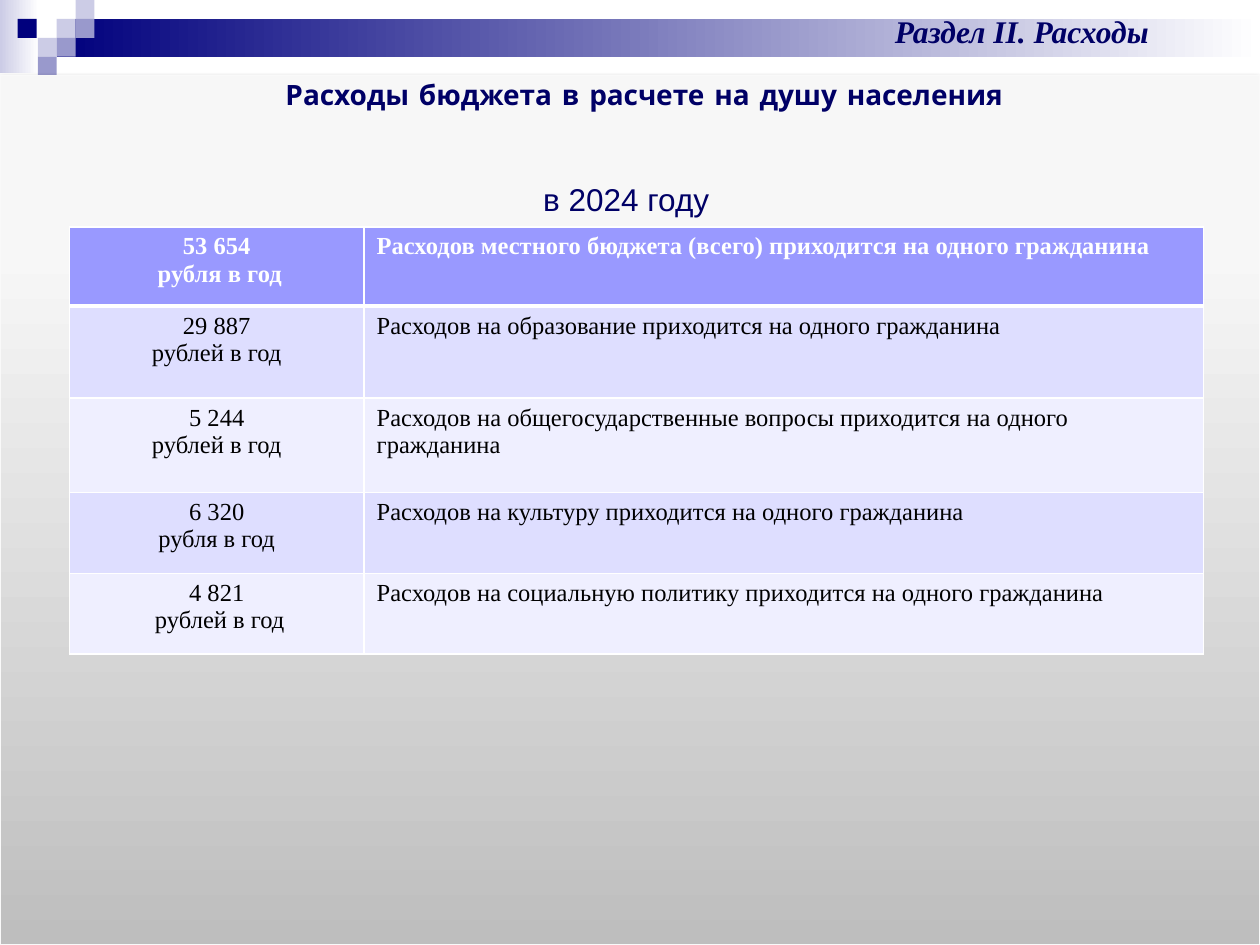
from copy import deepcopy

from lxml import etree
from pptx import Presentation
from pptx.dml.color import RGBColor
from pptx.enum.shapes import MSO_SHAPE
from pptx.enum.text import MSO_ANCHOR, PP_ALIGN
from pptx.oxml import parse_xml
from pptx.oxml.ns import nsdecls, qn
from pptx.util import Inches, Pt

RECTANGLE, PROCESS = MSO_SHAPE.RECTANGLE, MSO_SHAPE.FLOWCHART_PROCESS
CENTER, LEFT = PP_ALIGN.CENTER, PP_ALIGN.LEFT
MIDDLE = MSO_ANCHOR.MIDDLE

WHITE = RGBColor(0xFF, 0xFF, 0xFF)
BLACK = RGBColor(0x00, 0x00, 0x00)
NAVY = RGBColor(0x00, 0x00, 0x7D)
INK = RGBColor(0x00, 0x00, 0x66)
LILAC = RGBColor(0xCC, 0xCC, 0xE6)
VIOLET = RGBColor(0x99, 0x99, 0xCC)
HEADER = RGBColor(0x99, 0x99, 0xFF)
BAND_DARK = RGBColor(0xDE, 0xDE, 0xFF)
BAND_LIGHT = RGBColor(0xEF, 0xEF, 0xFF)
GREY = RGBColor(0xBE, 0xBE, 0xBE)
PALE = RGBColor(0xF7, 0xF7, 0xF7)
PALEST = RGBColor(0xF8, 0xF8, 0xF8)
EDGE = RGBColor(0xF9, 0xF9, 0xF9)

SQUARES = [
    (0.45, 0.15, LILAC), (0.6, 0, LILAC), (0.6, 0.15, VIOLET), (0.3, 0.3, LILAC),
    (0.14, 0.15, NAVY), (0.45, 0.3, VIOLET), (0.3, 0.45, VIOLET),
]
COLUMN_WIDTHS = [2.34, 6.66]
ROW_HEIGHTS = [0.63, 0.73, 0.75, 0.64, 0.64]
EXPENSES = [
    ("53 654\n рубля в год", "Расходов местного бюджета (всего) приходится на одного гражданина"),
    ("29 887\nрублей в год", "Расходов на образование приходится на одного гражданина"),
    ("5 244\nрублей в год", "Расходов на общегосударственные вопросы приходится на одного гражданина"),
    ("6 320\nрубля в год", "Расходов на культуру приходится на одного гражданина"),
    ("4 821\n рублей в год", "Расходов на социальную политику приходится на одного гражданина"),
]


def write_text(frame, text, font="Times New Roman", size=14, color=BLACK,
               bold=False, italic=False, align=LEFT):
    """Fill a text frame with one formatted paragraph per line of text."""
    frame.word_wrap = True
    for index, line in enumerate(text.split("\n")):
        para = frame.add_paragraph() if index else frame.paragraphs[0]
        para.alignment = align
        span = para.add_run()
        span.text = line
        span.font.name, span.font.size = font, Pt(size)
        span.font.bold, span.font.italic = bold, italic
        span.font.color.rgb = color


class BudgetPage:
    """Holds the current slide and draws its elements in one style."""

    def __init__(self, deck):
        self.page = deck.slides.add_slide(deck.slide_layouts[5])
        self.shapes = self.page.shapes

    def block(self, left, top, width, height, color=None, kind=RECTANGLE):
        box = self.shapes.add_shape(kind, Inches(left), Inches(top), Inches(width), Inches(height))
        box.shadow.inherit = False
        box.line.fill.background()
        if color is not None:
            box.fill.solid()
            box.fill.fore_color.rgb = color
        return box

    def gradient(self, box, stops, angle=0):
        box.fill.gradient()
        box.fill.gradient_angle = angle
        stop_list = box._element.spPr.find(f".//{qn('a:gsLst')}")
        for _ in stops[2:]:
            stop_list.append(deepcopy(stop_list[0]))
        for stop, (position, color) in zip(box.fill.gradient_stops, stops):
            stop.position = position
            stop.color.rgb = color

    def panel(self):
        box = self.block(0, 0.6, 10, 6.9, kind=PROCESS)
        self.gradient(box, [(0, GREY), (0.8, PALE), (1, PALEST)], angle=90)
        box.line.color.rgb = EDGE
        box.line.width = Pt(0.75)
        effects = box._element.spPr.find(qn("a:effectLst"))
        shadow = etree.SubElement(effects, qn("a:outerShdw"), blurRad=str(Pt(3.1)),
                                  dist=str(Pt(1.8)), dir="5400000", rotWithShape="0")
        color = etree.SubElement(shadow, qn("a:srgbClr"), val=str(BLACK))
        etree.SubElement(color, qn("a:alpha"), val="35000")

    def title(self, text, left, top, width, height, **style):
        box = self.shapes.title
        box.left, box.top = Inches(left), Inches(top)
        box.width, box.height = Inches(width), Inches(height)
        box.text_frame.vertical_anchor = MIDDLE
        write_text(box.text_frame, text, **style)
        self.shapes._spTree.append(box._element)

    def label(self, text, left, top, width, height, **style):
        box = self.shapes.add_textbox(Inches(left), Inches(top), Inches(width), Inches(height))
        write_text(box.text_frame, text, **style)

    def borders(self, cell, bottom):
        properties = cell._tc.get_or_add_tcPr()
        for index, side in enumerate(("lnL", "lnR", "lnT", "lnB")):
            width = Pt(bottom if side == "lnB" else 1)
            properties.insert(index, parse_xml(
                f'<a:{side} {nsdecls("a")} w="{width}"><a:solidFill>'
                f'<a:srgbClr val="{WHITE}"/></a:solidFill></a:{side}>'))

    def table(self, rows, left, top):
        grid = self.shapes.add_table(
            len(rows), len(COLUMN_WIDTHS), Inches(left), Inches(top),
            Inches(sum(COLUMN_WIDTHS)), Inches(sum(ROW_HEIGHTS))).table
        for column, width in zip(grid.columns, COLUMN_WIDTHS):
            column.width = Inches(width)
        for row, height in zip(grid.rows, ROW_HEIGHTS):
            row.height = Inches(height)
        for row, texts in enumerate(rows):
            is_header = row == 0
            band = HEADER if is_header else BAND_DARK if row % 2 else BAND_LIGHT
            for column, text in enumerate(texts):
                cell = grid.cell(row, column)
                cell.fill.solid()
                cell.fill.fore_color.rgb = band
                self.borders(cell, bottom=3 if is_header else 1)
                write_text(cell.text_frame, text, bold=is_header,
                           color=WHITE if is_header else BLACK,
                           align=LEFT if column else CENTER)


def main():
    deck = Presentation()
    deck.slide_width, deck.slide_height = Inches(10), Inches(7.5)
    budget = BudgetPage(deck)
    budget.gradient(budget.block(0, 0, 0.31, 0.58), [(0, LILAC), (1, WHITE)])
    budget.gradient(budget.block(0.45, 0.15, 9.55, 0.3), [(0, NAVY), (1, WHITE)])
    for left, top, color in SQUARES:
        budget.block(left, top, 0.15, 0.15, color)
    budget.panel()
    budget.title("в 2024 году", -0.03, 1.31, 10, 0.54,
                 font="Arial", size=18, color=INK, align=CENTER)
    budget.table(EXPENSES, 0.55, 1.8)
    budget.label("Раздел II. Расходы", 6.26, 0.05, 3.7, 0.4,
                 size=18, color=INK, bold=True, italic=True, align=CENTER)
    budget.label("Расходы бюджета в расчете на душу населения", 0.87, 0.57, 8.49, 0.37,
                 font="Comic Neue", size=16, color=INK, bold=True, align=CENTER)
    deck.save("out.pptx")


if __name__ == "__main__":
    main()
